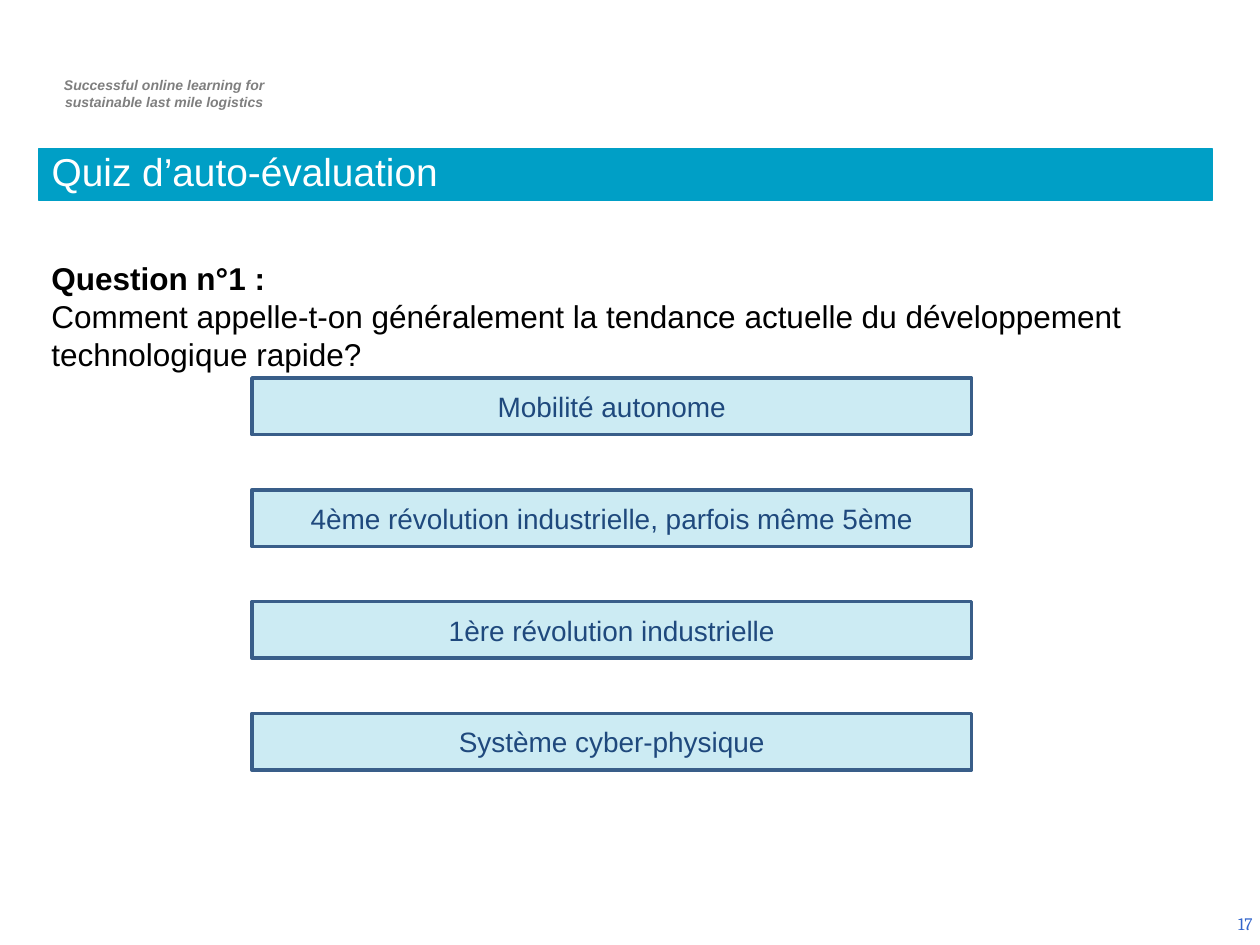
from lxml import etree
from pptx import Presentation
from pptx import util as u
from pptx.dml.color import RGBColor
from pptx.enum import shapes, text
from pptx.oxml.ns import qn

CYAN = RGBColor(0x00, 0x9F, 0xC6)
EDGE = RGBColor(0x39, 0x5E, 0x89)
NAVY = RGBColor(0x1F, 0x49, 0x7D)
BLUE = RGBColor(0x33, 0x66, 0xCC)
GREY = RGBColor(0x7F, 0x7F, 0x7F)
WHITE = RGBColor(0xFF, 0xFF, 0xFF)
BLACK = RGBColor(0x00, 0x00, 0x00)

LEFT, WIDE = 0.31, 9.31  # main column
TOP, STEP = 3, 0.887  # answer rows
ANSWERS = [
    "Mobilité autonome",
    "4ème révolution industrielle, parfois même 5ème",
    "1ère révolution industrielle",
    "Système cyber-physique",
]


def inches(*sizes):
    return [u.Inches(size) for size in sizes]


def write(shape, lines, size, color, align=text.PP_ALIGN.LEFT,
          anchor=text.MSO_ANCHOR.TOP, face="Arial", slant=False):
    """Fill a shape with (words, bold) lines, one paragraph each."""
    frame = shape.text_frame
    frame.word_wrap = True
    frame.auto_size = text.MSO_AUTO_SIZE.NONE
    frame.vertical_anchor = anchor
    for row, (words, bold) in enumerate(lines):
        para = frame.add_paragraph() if row else frame.paragraphs[0]
        para.alignment = align
        run = para.add_run()
        run.text = words
        font = run.font
        font.name, font.size = face, u.Pt(size)
        font.bold, font.italic = bold, slant
        font.color.rgb = color


def label(slide, box, lines, size, color, **style):
    write(slide.shapes.add_textbox(*inches(*box)), lines, size, color, **style)


def paint(shape, line, width):
    shape.fill.solid()
    shape.fill.fore_color.rgb = CYAN
    shape.line.color.rgb = line
    shape.line.width = u.Pt(width)


def banner(slide, words):
    title = slide.shapes.title
    title.left, title.top, title.width, title.height = inches(
        LEFT, 1.18, WIDE, 0.41)
    paint(title, CYAN, 0.75)
    write(title, [(words, False)], 22.2, WHITE, anchor=text.MSO_ANCHOR.BOTTOM)
    title.text_frame.paragraphs[0].line_spacing = 0.8


def answer(slide, row, words):
    box = slide.shapes.add_shape(
        shapes.MSO_SHAPE.RECTANGLE, *inches(2, TOP + row * STEP, 5.71, 0.45))
    box.shadow.inherit = False
    paint(box, EDGE, 2)
    tint = box.fill._xPr.find(qn("a:solidFill"))[0]
    etree.SubElement(tint, qn("a:alpha")).set("val", "20000")
    write(box, [(words, False)], 16, NAVY, text.PP_ALIGN.CENTER,
          text.MSO_ANCHOR.MIDDLE)


def main():
    deck = Presentation()
    deck.slide_width, deck.slide_height = inches(10, 7.5)
    slide = deck.slides.add_slide(deck.slide_layouts[5])
    label(slide, (0.29, 0.56, 2.03, 0.37),
          [("Successful online learning for", True),
           ("sustainable last mile logistics", True)],
          8, GREY, align=text.PP_ALIGN.CENTER, slant=True)
    label(slide, (7.71, 7.13, 2.33, 0.4), [("17", False)], 10, BLUE,
          align=text.PP_ALIGN.RIGHT, anchor=text.MSO_ANCHOR.MIDDLE,
          face="Cambria")
    banner(slide, "Quiz d’auto-évaluation")
    label(slide, (LEFT, 2.01, WIDE, 1.31),
          [("Question n°1 :", True),
           ("Comment appelle-t-on généralement la tendance actuelle du "
            "développement technologique rapide?", False)], 18, BLACK)
    for row, words in enumerate(ANSWERS):
        answer(slide, row, words)
    deck.save("out.pptx")


if __name__ == "__main__":
    main()
